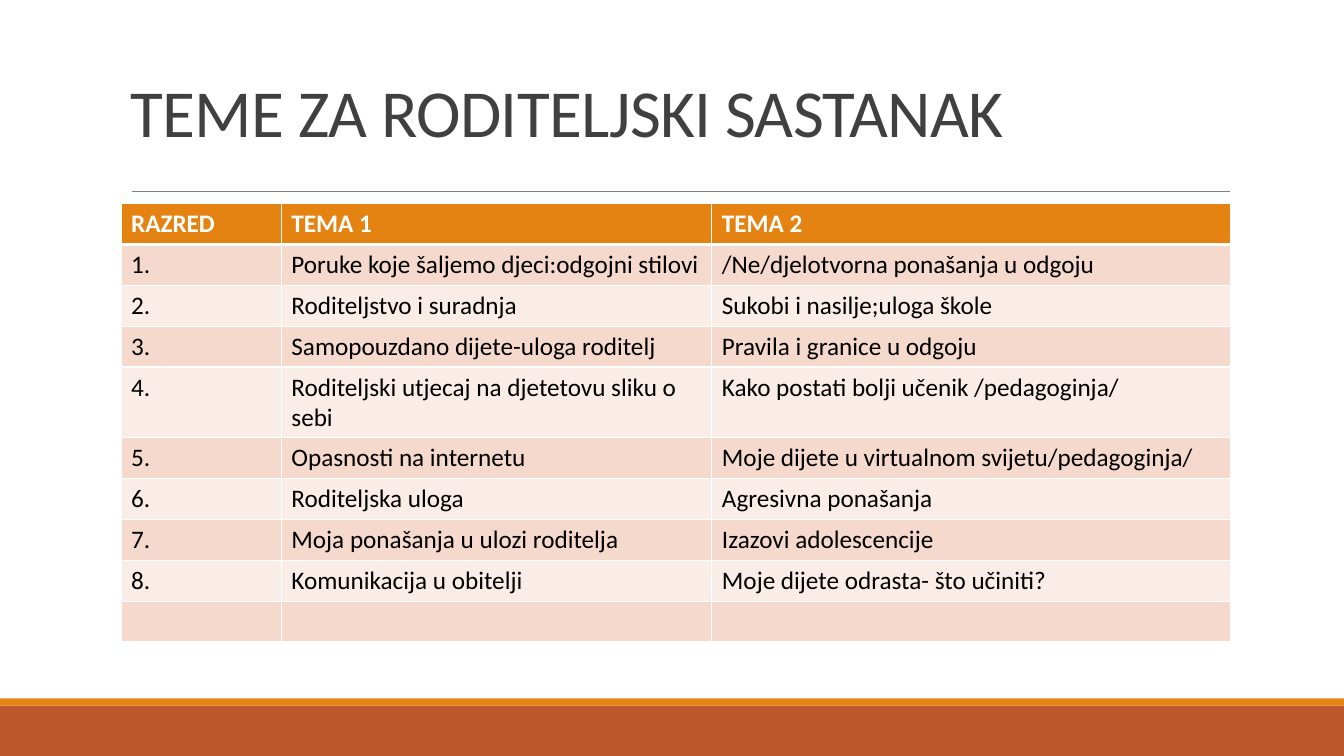
from lxml.etree import SubElement
from pptx import Presentation
from pptx.dml.color import RGBColor
from pptx.enum.shapes import MSO_CONNECTOR, MSO_SHAPE
from pptx.enum.text import MSO_ANCHOR
from pptx.oxml.ns import qn
from pptx.util import Cm, Pt

COLORS = {
    "footer": "BD582C", "accent": "E48312", "rule": "808080",
    "title": "404040", "text": "000000", "white": "FFFFFF",
    "band_dark": "F5D9CC", "band_light": "FAEDE7",
}
WIDTH, HEIGHT = 33.87, 19.05
TABLE_LEFT = 3.05
COLUMN_WIDTHS = (4.04, 10.85, 13.06)
ROW_HEIGHT = 1.03
TOPICS = [
    ("RAZRED", "TEMA 1", "TEMA 2"),
    ("1.", "Poruke koje šaljemo djeci:odgojni stilovi", "/Ne/djelotvorna ponašanja u odgoju"),
    ("2.", "Roditeljstvo i suradnja", "Sukobi i nasilje;uloga škole"),
    ("3.", "Samopouzdano dijete-uloga roditelj", "Pravila i granice u odgoju"),
    ("4.", "Roditeljski utjecaj na djetetovu sliku o sebi", "Kako postati bolji učenik /pedagoginja/"),
    ("5.", "Opasnosti na internetu", "Moje dijete u virtualnom svijetu/pedagoginja/"),
    ("6.", "Roditeljska uloga", "Agresivna ponašanja"),
    ("7.", "Moja ponašanja u ulozi roditelja", "Izazovi adolescencije"),
    ("8.", "Komunikacija u obitelji", "Moje dijete odrasta- što učiniti?"),
    ("", "", ""),
]


def color(name):
    return RGBColor.from_string(COLORS[name])


class SlideBuilder:
    font_name = "Calibri"

    def __init__(self, slide):
        self.slide = slide
        self.shapes = slide.shapes

    def style(self, paragraph, size, color_name, bold=False):
        font = paragraph.font
        font.name, font.size, font.bold = self.font_name, Pt(size), bold
        font.color.rgb = color(color_name)

    def band(self, top, height, color_name):
        """Draw a full-width strip without outline."""
        strip = self.shapes.add_shape(
            MSO_SHAPE.RECTANGLE, 0, Cm(top), Cm(WIDTH), Cm(height))
        strip.shadow.inherit = False
        strip.fill.solid()
        strip.fill.fore_color.rgb = color(color_name)
        strip.line.fill.background()

    def rule(self, left, right, y):
        line = self.shapes.add_connector(
            MSO_CONNECTOR.STRAIGHT, Cm(left), Cm(y), Cm(right), Cm(y))
        line.line.color.rgb = color("rule")
        line.line.width = Pt(0.5)
        SubElement(line._element.spPr, qn("a:effectLst"))

    def title(self, text, left, top, width, height):
        frame = self.shapes.add_textbox(
            Cm(left), Cm(top), Cm(width), Cm(height)).text_frame
        frame.word_wrap = True
        frame.vertical_anchor = MSO_ANCHOR.BOTTOM
        heading = frame.paragraphs[0]
        heading.line_spacing = 0.85
        self.style(heading, 48, "title")
        run = heading.add_run()
        run.text = text
        run._r.get_or_add_rPr().set("spc", "-50")

    def borders(self, cell, top, bottom):
        """Add white cell borders; top and bottom widths are in points."""
        properties = cell._tc.get_or_add_tcPr()
        for side, width in (("L", 1), ("R", 1), ("T", top), ("B", bottom)):
            edge = SubElement(properties, qn(f"a:ln{side}"), w=str(Pt(width)))
            fill = SubElement(edge, qn("a:solidFill"))
            SubElement(fill, qn("a:srgbClr"), val=COLORS["white"])

    def table(self, rows, left, top, column_widths, row_height):
        grid = self.shapes.add_table(
            len(rows), len(column_widths), Cm(left), Cm(top),
            Cm(sum(column_widths)), Cm(row_height * len(rows))).table
        for column, width in zip(grid.columns, column_widths):
            column.width = Cm(width)
        for r, texts in enumerate(rows):
            grid.rows[r].height = Cm(row_height)
            header = r == 0
            band = "accent" if header else "band_dark" if r % 2 else "band_light"
            for c, text in enumerate(texts):
                cell = grid.cell(r, c)
                self.borders(cell, 3 if r == 1 else 1, 3 if header else 1)
                cell.fill.solid()
                cell.fill.fore_color.rgb = color(band)
                paragraph = cell.text_frame.paragraphs[0]
                if text:
                    paragraph.text = text
                self.style(paragraph, 18, "white" if header else "text", header)


def main():
    deck = Presentation()
    deck.slide_width, deck.slide_height = Cm(WIDTH), Cm(HEIGHT)
    page = SlideBuilder(deck.slides.add_slide(deck.slide_layouts[6]))
    page.band(17.78, 1.27, "footer")
    page.band(17.6, 0.18, "accent")
    page.rule(3.32, 31.0, 4.83)
    page.title("TEME ZA RODITELJSKI SASTANAK", TABLE_LEFT, 0.79, 27.94, 3.15)
    page.table(TOPICS, TABLE_LEFT, 5.13, COLUMN_WIDTHS, ROW_HEIGHT)
    deck.save("out.pptx")


if __name__ == "__main__":
    main()
